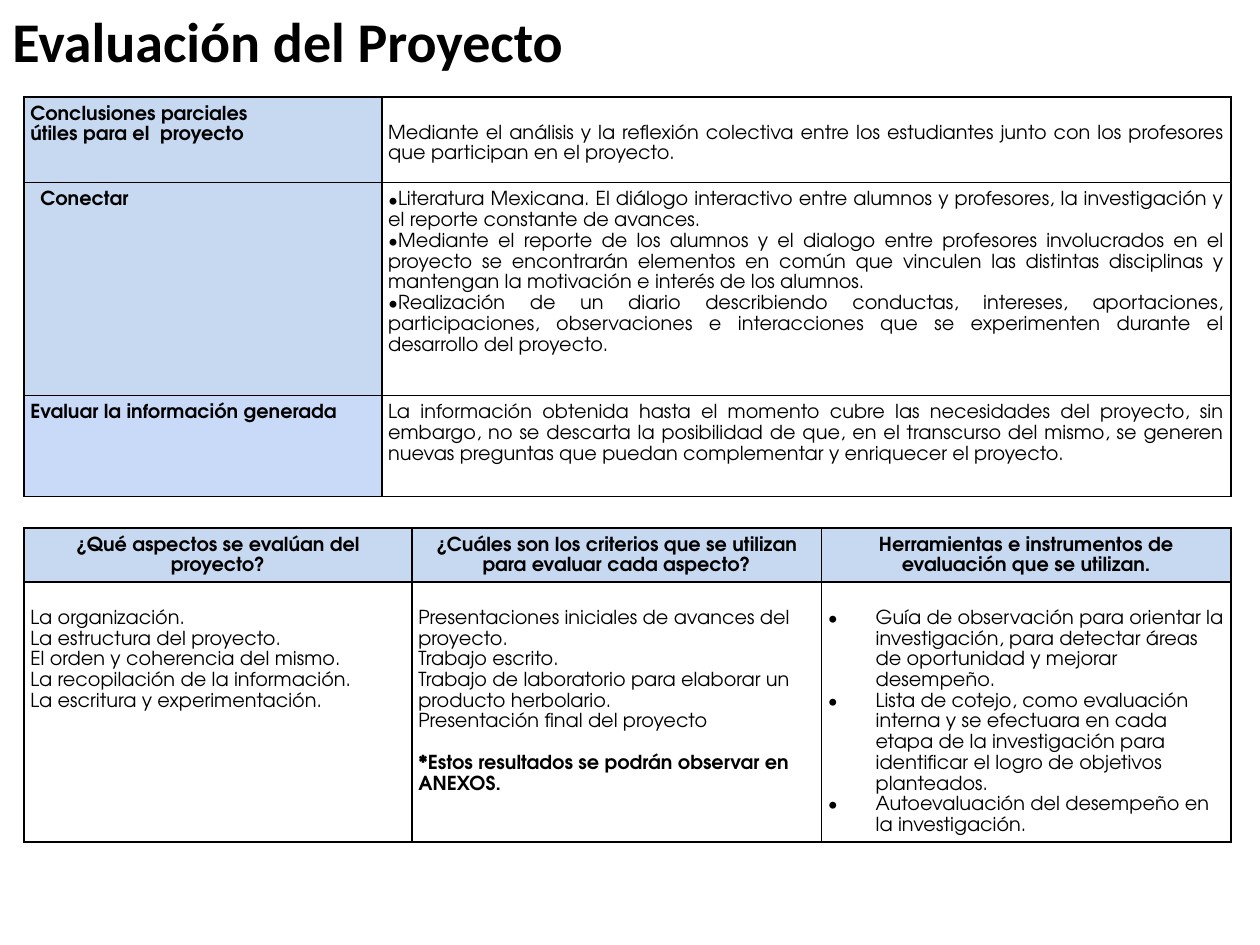
from lxml.etree import SubElement
from pptx import Presentation
from pptx.dml.color import RGBColor
from pptx.enum.text import MSO_ANCHOR as Anchor, PP_ALIGN as Align
from pptx.oxml.ns import qn
from pptx.util import Inches, Pt

COLORS = {"ink": "000000", "label": "C6D9F1", "last": "C9DAF8", "paper": "FFFFFF"}
MARGIN = 0.05
BLANK_LINE = 0.15


def entry(*lines, **style):
    """Pair the lines of a cell with its format."""
    return lines, style


def add_text(para, text, font, size, bold=False, align=Align.LEFT):
    """Add formatted text to a paragraph."""
    para.alignment = align
    span = para.add_run()
    span.text = text
    span.font.name = font
    span.font.size = Pt(size)
    span.font.bold = bold
    span.font.color.rgb = RGBColor.from_string(COLORS["ink"])


class EvaluationPage:
    """Style and drawing methods for the evaluation page."""

    body_font = "TeX Gyre Adventor"
    title_font = "Calibri"

    def __init__(self, deck):
        self.page = deck.slides.add_slide(deck.slide_layouts[6])

    def title(self, text, left, top, width, height):
        box = self.page.shapes.add_textbox(*map(Inches, (left, top, width, height)))
        box.text_frame.word_wrap = True
        add_text(box.text_frame.paragraphs[0], text, self.title_font, 32, bold=True)

    def bullet(self, para, mark, margin, indent):
        props = para._p.get_or_add_pPr()
        props.set("marL", str(Inches(margin)))
        props.set("indent", str(Inches(indent)))
        color = SubElement(props, qn("a:buClr"))
        SubElement(color, qn("a:srgbClr"), val=COLORS["ink"])
        SubElement(props, qn("a:buFont"), typeface=self.body_font)
        SubElement(props, qn("a:buChar"), char=mark)

    def borders(self, cell):
        props = cell._tc.get_or_add_tcPr()
        for place, side in enumerate(("lnL", "lnR", "lnT", "lnB")):
            line = SubElement(props, qn(f"a:{side}"), w=str(Pt(1)))
            fill = SubElement(line, qn("a:solidFill"))
            SubElement(fill, qn("a:srgbClr"), val=COLORS["ink"])
            props.insert(place, line)

    def cell(self, cell, lines, fill="paper", bold=False, align=Align.LEFT,
             bullet=None, drop=0, shift=0, closing=None):
        cell.fill.solid()
        cell.fill.fore_color.rgb = RGBColor.from_string(COLORS[fill])
        self.borders(cell)
        cell.vertical_anchor = Anchor.TOP
        cell.margin_right = cell.margin_bottom = Inches(MARGIN)
        cell.margin_left = Inches(MARGIN + shift)
        cell.margin_top = Inches(MARGIN + drop)
        frame = cell.text_frame
        texts = [*lines, closing] if closing else lines
        for place, text in enumerate(texts):
            para = frame.add_paragraph() if place else frame.paragraphs[0]
            para.line_spacing = 1.15
            if text is closing:
                para.space_before = Pt(12)
            if bullet:
                self.bullet(para, *bullet)
            add_text(para, text, self.body_font, 11, bold or text is closing, align)

    def table(self, left, top, widths, heights, rows):
        frame = self.page.shapes.add_table(
            len(heights), len(widths), Inches(left), Inches(top),
            Inches(sum(widths)), Inches(sum(heights)))
        table = frame.table
        table.first_row = table.horz_banding = False
        for column, width in zip(table.columns, widths):
            column.width = Inches(width)
        for row, height, entries in zip(table.rows, heights, rows):
            row.height = Inches(height)
            for cell, (lines, style) in zip(row.cells, entries):
                self.cell(cell, lines, **style)


def main():
    """Build and save the evaluation page."""
    deck = Presentation()
    deck.slide_width, deck.slide_height = Inches(10), Inches(7.5)
    page = EvaluationPage(deck)
    label = {"fill": "label", "bold": True}
    heading = {**label, "align": Align.CENTER}

    page.table(0.19, 0.77, [2.84, 6.74], [0.68, 1.69, 0.8], [
        [entry("Conclusiones parciales", "útiles para el  proyecto", **label),
         entry("Mediante el análisis y la reflexión colectiva entre los estudiantes junto "
               "con los profesores que participan en el proyecto.",
               align=Align.JUSTIFY, drop=BLANK_LINE)],
        [entry("Conectar", shift=0.08, **label),
         entry("Literatura Mexicana. El diálogo interactivo entre alumnos y profesores, la "
               "investigación y el reporte constante de avances.",
               "Mediante el reporte de los alumnos y el dialogo entre profesores involucrados "
               "en el proyecto se encontrarán elementos en común que vinculen las distintas "
               "disciplinas y mantengan la motivación e interés de los alumnos.",
               "Realización de un diario describiendo conductas, intereses, aportaciones, "
               "participaciones, observaciones e interacciones que se experimenten durante "
               "el desarrollo del proyecto.",
               align=Align.JUSTIFY, bullet=("•", 0, -0.11))],
        [entry("Evaluar la información generada", fill="last", bold=True),
         entry("La información obtenida hasta el momento cubre las necesidades del proyecto, "
               "sin embargo, no se descarta la posibilidad de que, en el transcurso del mismo, "
               "se generen nuevas preguntas que puedan complementar y enriquecer el proyecto.",
               align=Align.JUSTIFY)],
    ])

    page.table(0.19, 4.19, [3.08, 3.25, 3.25], [0.43, 2.05], [
        [entry("¿Qué aspectos se evalúan del proyecto?", **heading),
         entry("¿Cuáles son los criterios que se utilizan para evaluar cada aspecto?",
               **heading),
         entry("Herramientas e instrumentos de evaluación que se utilizan.", **heading)],
        [entry("La organización.", "La estructura del proyecto.",
               "El orden y coherencia del mismo.", "La recopilación de la información.",
               "La escritura y experimentación.", drop=BLANK_LINE),
         entry("Presentaciones iniciales de avances del proyecto.", "Trabajo escrito.",
               "Trabajo de laboratorio para elaborar un producto herbolario.",
               "Presentación final del proyecto", drop=BLANK_LINE,
               closing="*Estos resultados se podrán observar en ANEXOS."),
         entry("Guía de observación para orientar la investigación, para detectar áreas de "
               "oportunidad y mejorar desempeño.",
               "Lista de cotejo, como evaluación interna y se efectuara en cada etapa de la "
               "investigación para identificar el logro de objetivos planteados.",
               "Autoevaluación del desempeño en la investigación.",
               bullet=("∙", 0.38, -0.38), drop=BLANK_LINE)],
    ])

    page.title("Evaluación del Proyecto", 0, 0, 7.38, 0.44)
    deck.save("out.pptx")


if __name__ == "__main__":
    main()
